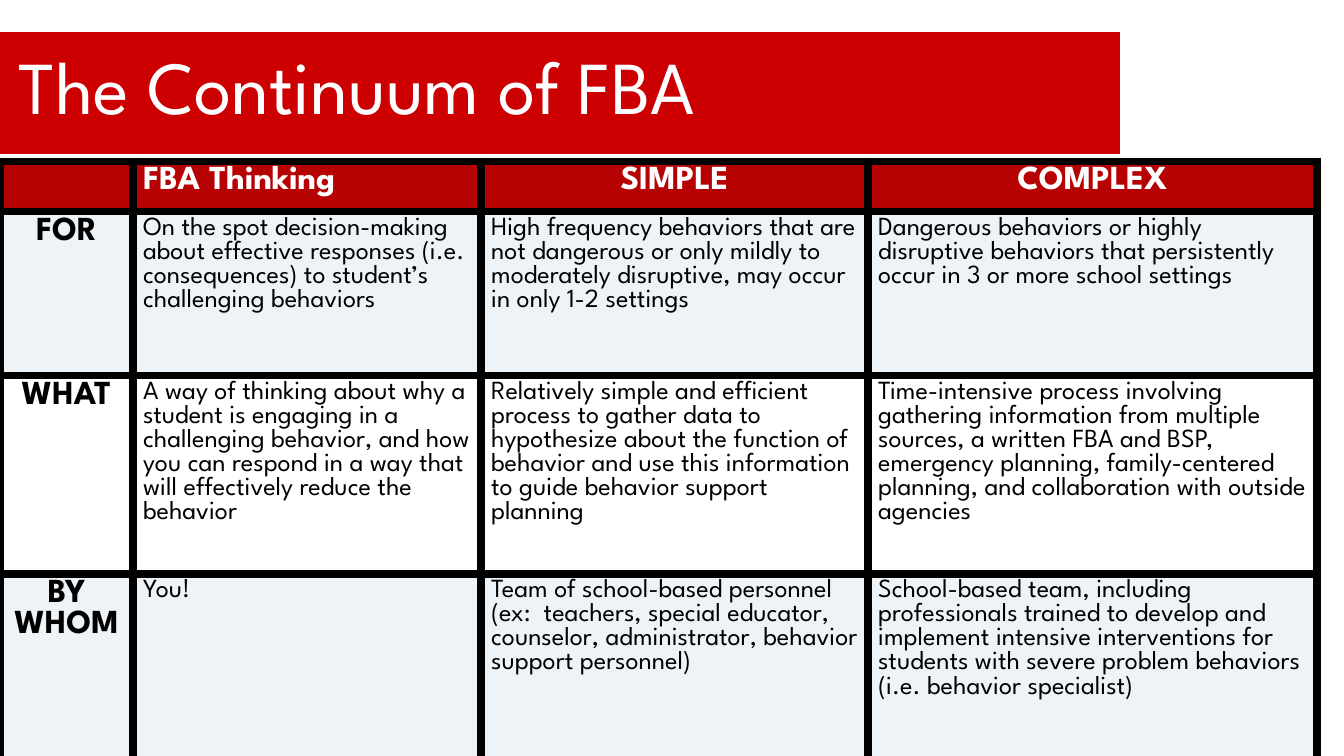
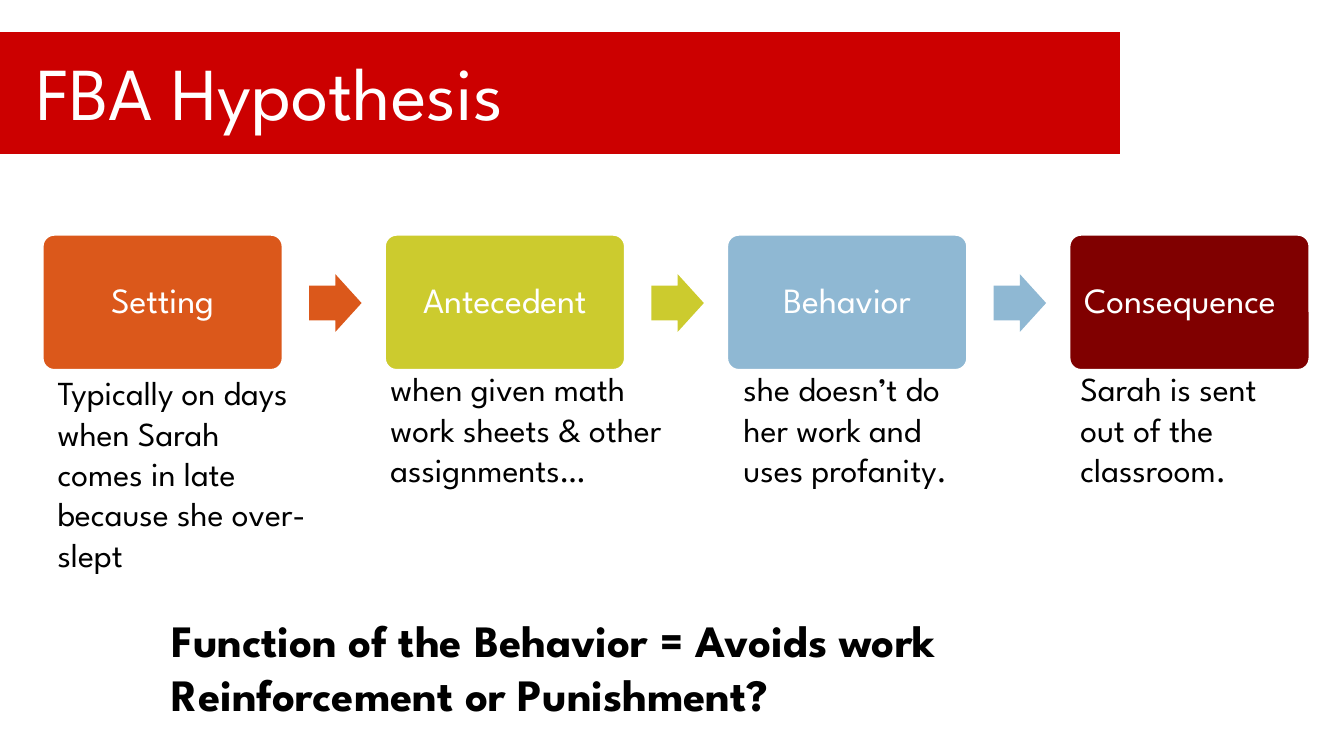
from itertools import product

from lxml.etree import SubElement
from pptx import Presentation
from pptx.dml.color import RGBColor
from pptx.enum.shapes import MSO_SHAPE as SHAPE
from pptx.enum.text import MSO_ANCHOR as ANCHOR, PP_ALIGN as ALIGN
from pptx.oxml.ns import qn
from pptx.util import Inches, Pt

# The grid has 100 columns of square cells on a 16:9 slide
CELL = 0.1
COLS = 100
ROWS = COLS * 9 / 16
FONT = "League Spartan"
C = {
    "white": "FFFFFF", "black": "000000", "band": "CC0000",
    "header": "B60202", "stripe": "EEF3F7",
    "setting": "DB581B", "antecedent": "CCCB2E",
    "behavior": "8FB8D3", "consequence": "800000",
}

TABLE = [
    ["", "FBA Thinking", "SIMPLE", "COMPLEX"],
    ["FOR",
     "On the spot decision-making about effective responses (i.e. consequences) "
     "to student’s challenging behaviors",
     "High frequency behaviors that are not dangerous or only mildly to "
     "moderately disruptive, may occur in only 1-2 settings",
     "Dangerous behaviors or highly disruptive behaviors that persistently "
     "occur in 3 or more school settings"],
    ["WHAT",
     "A way of thinking about why a student is engaging in a challenging "
     "behavior, and how you can respond in a way that will effectively reduce "
     "the behavior",
     "Relatively simple and efficient process to gather data to hypothesize "
     "about the function of behavior and use this information to guide "
     "behavior support planning",
     "Time-intensive process involving gathering information from multiple "
     "sources, a written FBA and BSP, emergency planning, family-centered "
     "planning, and collaboration with outside agencies"],
    ["BY WHOM",
     "You!",
     "Team of school-based personnel (ex:  teachers, special educator, "
     "counselor, administrator, behavior support personnel)",
     "School-based team, including professionals trained to develop and "
     "implement intensive interventions for students with severe problem "
     "behaviors (i.e. behavior specialist)"],
]
COL_WIDTHS = [9.9, 25.9, 28.8, 33.4]
ROW_HEIGHTS = [3.7, 12.2, 14.5, 13.9]

# Label, colour, label insets, note, note box relative to its step
STEPS = [
    ("Setting", "setting", (0.08, 0.08),
     "Typically on days when Sarah comes in late because she over-slept",
     (0.3, 9.9, 20.5, 16.2)),
    ("Antecedent", "antecedent", (0.08, 0.08),
     "when given math work sheets & other assignments…",
     (-0.4, 9.6, 22.5, 13.1)),
    ("Behavior", "behavior", (0.08, 0.08),
     "she doesn’t do her work and uses profanity.",
     (0.4, 9.6, 20.1, 13.1)),
    ("Consequence", "consequence", (0.02, 0.16),
     "Sarah is sent out of the classroom.",
     (0, 9.6, 19, 18.2)),
]


def rgb(name):
    return RGBColor.from_string(C[name])


def g(n):
    return Inches(n * CELL)


def place(box, x, y, w, h):
    """Turn a place relative to a box into a place on the slide."""
    return box[0] + x, box[1] + y, w, h


def write(tf, text, size=18, color="black", bold=False, align=None,
          spacing=None, anchor=ANCHOR.TOP, insets=(0.1, 0.05, 0.1, 0.05)):
    tf.word_wrap = True
    tf.vertical_anchor = anchor
    (tf.margin_left, tf.margin_top,
     tf.margin_right, tf.margin_bottom) = map(Inches, insets)
    for i, line in enumerate(text.split("\n")):
        p = tf.add_paragraph() if i else tf.paragraphs[0]
        p.alignment = align
        p.line_spacing = spacing
        r = p.add_run()
        r.text = line
        r.font.name, r.font.size, r.font.bold = FONT, Pt(size), bold
        r.font.color.rgb = rgb(color)


def add_text(s, box, text, **fmt):
    write(s.shapes.add_textbox(*map(g, box)).text_frame, text, **fmt)


def add_shape(s, kind, box, fill, line=None, adjust=()):
    sp = s.shapes.add_shape(kind, *map(g, box))
    sp.shadow.inherit = False
    sp.fill.solid()
    sp.fill.fore_color.rgb = rgb(fill)
    if line:
        sp.line.color.rgb = rgb("white")
        sp.line.width = Pt(line)
    else:
        sp.line.fill.background()
    for i, value in enumerate(adjust):
        sp.adjustments[i] = value
    return sp


def style_cell(cell, fill):
    tc_pr = cell._tc.get_or_add_tcPr()
    for side in ("a:lnL", "a:lnR", "a:lnT", "a:lnB"):
        ln = SubElement(tc_pr, qn(side), w=str(Pt(4.5)))
        SubElement(SubElement(ln, qn("a:solidFill")), qn("a:srgbClr"),
                   val=C["black"])
    cell.fill.solid()
    cell.fill.fore_color.rgb = rgb(fill)


# Title band shared by both slides
def title_band(s, box, text, title_box, inset):
    add_shape(s, SHAPE.RECTANGLE, box, "band", line=0.75)
    add_text(s, place(box, *title_box), text, size=40, color="white",
             anchor=ANCHOR.MIDDLE, insets=(0.1, inset, 0.1, inset))


def new_slide(prs, title, title_box, inset):
    s = prs.slides.add_slide(prs.slide_layouts[6])
    title_band(s, (-0.8, 2.3, 84.2, 9.2), title, title_box, inset)
    return s


# Comparison table
def continuum_table(s, box):
    table = s.shapes.add_table(len(TABLE), len(TABLE[0]), *map(g, box)).table
    for col, width in zip(table.columns, COL_WIDTHS):
        col.width = g(width)
    for row, height in zip(table.rows, ROW_HEIGHTS):
        row.height = g(height)
    for i, j in product(range(len(TABLE)), range(len(TABLE[0]))):
        cell = table.cell(i, j)
        head = i == 0 or j == 0
        centred = head and (i, j) != (0, 1)
        style_cell(cell, "header" if i == 0 else "stripe" if i % 2 else "white")
        write(cell.text_frame, TABLE[i][j], size=18 if head else 14, bold=head,
              color="white" if i == 0 else "black", spacing=1.0,
              align=ALIGN.CENTER if centred else None)
        cell.margin_left = cell.margin_right = Pt(5.4)
        cell.margin_top = cell.margin_bottom = Pt(2.7)


# One step of the chain: label, note and the arrow to the next step
def chain_step(s, box, label, color, sides, note, note_box, arrow):
    sp = add_shape(s, SHAPE.ROUNDED_RECTANGLE, box, color, 3.5, [0.1])
    write(sp.text_frame, label, size=19, color="white", align=ALIGN.CENTER,
          spacing=0.9, anchor=ANCHOR.MIDDLE,
          insets=(sides[0], 0.08, sides[1], 0.08))
    if arrow:
        add_shape(s, SHAPE.RIGHT_ARROW, place(box, 20, 3.1, 3.9, 4.3), color,
                  adjust=[0.6, 0.5])
    add_text(s, place(box, *note_box), note)


def behavior_chain(s, box):
    step_w, step_h = 18.2, 10.4
    pitch = (box[2] - step_w) / (len(STEPS) - 1)
    for i, step in enumerate(STEPS):
        chain_step(s, place(box, i * pitch, 0, step_w, step_h), *step,
                   arrow=i < len(STEPS) - 1)


def continuum_slide(prs):
    s = new_slide(prs, "The Continuum of FBA", (1.2, 0.8, 81.2, 6.4), 0.1)
    continuum_table(s, (0, 12, sum(COL_WIDTHS), sum(ROW_HEIGHTS)))


def hypothesis_slide(prs):
    s = new_slide(prs, "FBA Hypothesis", (2.5, 0.4, 81.7, 8.1), 0.05)
    behavior_chain(s, (3, 17.3, 94.6, 10.4))
    # Conclusion
    add_text(s, (11.8, 45.1, 85.8, 5),
             "Function of the Behavior = Avoids work\n"
             "Reinforcement or Punishment?", size=24, bold=True)


def main():
    prs = Presentation()
    prs.slide_width, prs.slide_height = g(COLS), g(ROWS)
    continuum_slide(prs)
    hypothesis_slide(prs)
    prs.save("out.pptx")


if __name__ == "__main__":
    main()
